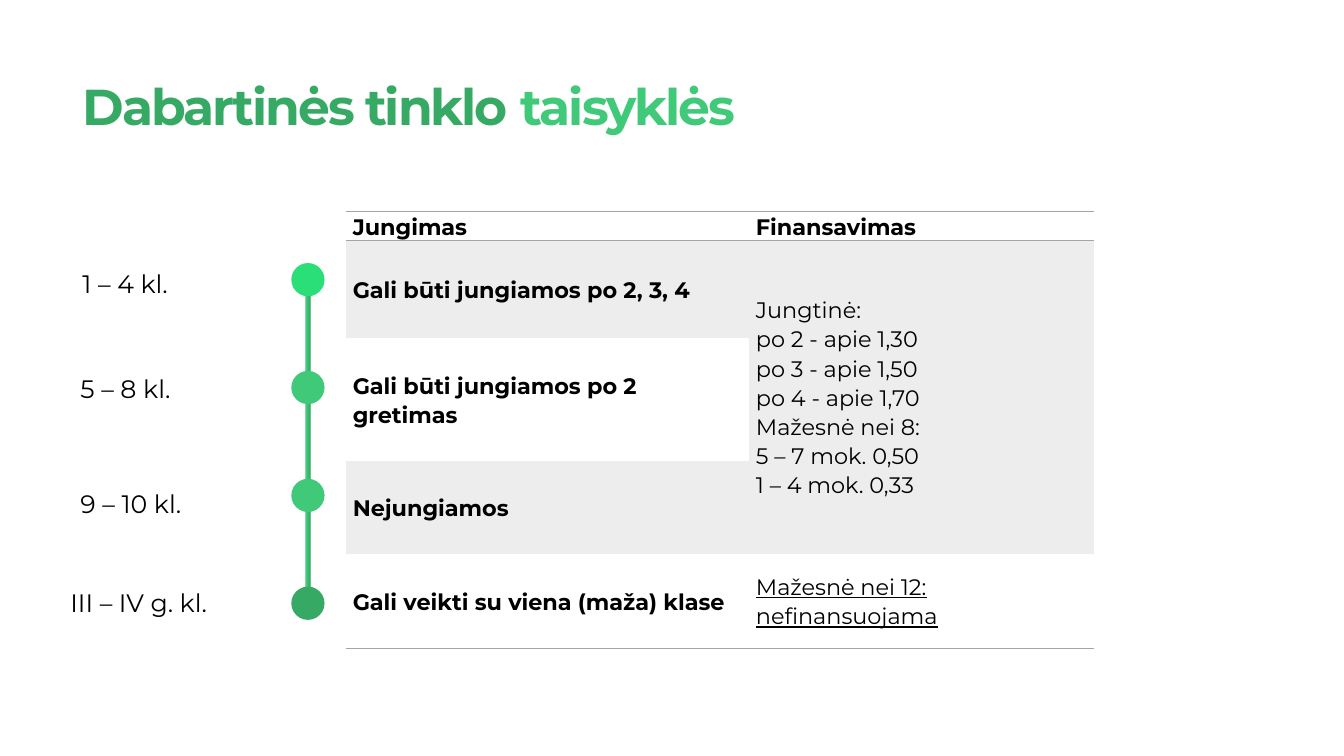
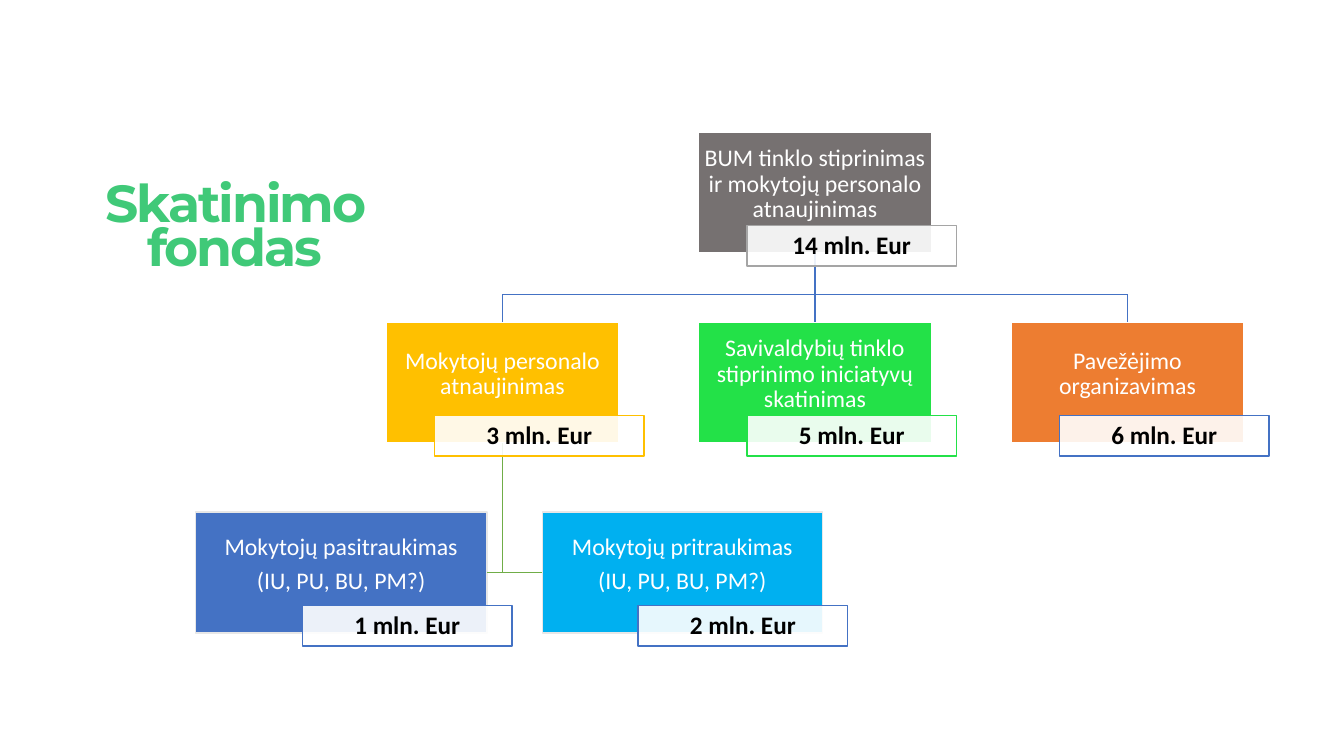
from lxml import etree
from pptx import Presentation
from pptx import util as u
from pptx.dml.color import RGBColor
from pptx.enum import shapes, text
from pptx.oxml import ns

CELL = u.Inches(0.1)  # the grid: square cells, 133.33 columns by 75 rows
COLS, ROWS = 133.33, 75

WHITE = RGBColor(0xFF, 0xFF, 0xFF)
BLACK = RGBColor(0, 0, 0)
DARK_GREEN = RGBColor(0x36, 0xAA, 0x65)
GREEN = RGBColor(0x40, 0xC9, 0x78)
LIGHT_GREEN = RGBColor(0x2B, 0xDF, 0x78)
VIVID_GREEN = RGBColor(0x23, 0xE1, 0x48)
LEAF = RGBColor(0x70, 0xAD, 0x47)
GREY = RGBColor(0xA5, 0xA5, 0xA5)
BAND = RGBColor(0xED, 0xED, 0xED)
DARK_GREY = RGBColor(0x76, 0x71, 0x71)
PALE_GREY = RGBColor(0xE7, 0xE7, 0xE7)
BLUE = RGBColor(0x44, 0x72, 0xC4)
SKY = RGBColor(0x00, 0xB0, 0xF0)
AMBER = RGBColor(0xFF, 0xC0, 0x00)
ORANGE = RGBColor(0xED, 0x7D, 0x31)

HEAD_FONT, CHART_FONT = "Montserrat", "Calibri"
PLAIN_TABLE = "{2D5ABB26-0587-4C30-8999-92F81FD0307C}"
LEFT, CENTER = text.PP_ALIGN.LEFT, text.PP_ALIGN.CENTER
MIDDLE, BOTTOM = text.MSO_ANCHOR.MIDDLE, text.MSO_ANCHOR.BOTTOM
RECT, OVAL = shapes.MSO_SHAPE.RECTANGLE, shapes.MSO_SHAPE.OVAL
TOP_SIDE, LEFT_SIDE, BOTTOM_SIDE, RIGHT_SIDE = range(4)


def grid(*cells):
    return [u.Emu(round(c * CELL)) for c in cells]


def write(tf, *paras, font=HEAD_FONT, size=18, color=BLACK, bold=False, underline=False,
          align=LEFT, leading=None, after=0, spacing=None):
    """Fill tf; a paragraph is a string or a list of (string, colour) runs."""
    for i, para in enumerate(paras):
        p = tf.add_paragraph() if i else tf.paragraphs[0]
        p.alignment = align
        p.space_after = u.Pt(after)
        if leading:
            p.line_spacing = leading
        for words, run_color in [(para, color)] if isinstance(para, str) else para:
            r = p.add_run()
            r.text = words
            f = r.font
            f.name, f.size, f.bold, f.underline = font, u.Pt(size), bold, underline
            f.color.rgb = run_color
            if spacing:
                r._r.get_or_add_rPr().set("spc", str(spacing))


def add_border(cell, side):
    tc_pr = cell._tc.get_or_add_tcPr()
    ln = etree.Element(ns.qn("a:ln" + side), w=str(u.Pt(1)))
    fill = etree.SubElement(ln, ns.qn("a:solidFill"))
    etree.SubElement(fill, ns.qn("a:srgbClr"), val=str(GREY))
    tc_pr.insert(0, ln)


class Deck:
    def __init__(self):
        self.prs = Presentation()
        self.prs.slide_width, self.prs.slide_height = grid(COLS, ROWS)

    def new_slide(self, title, box, **fmt):
        self.s = self.prs.slides.add_slide(self.prs.slide_layouts[5])
        sp = self.s.shapes.title
        sp.left, sp.top, sp.width, sp.height = grid(*box)
        tf = sp.text_frame
        tf.word_wrap, tf.auto_size = True, text.MSO_AUTO_SIZE.NONE
        tf.vertical_anchor = BOTTOM
        write(tf, title, bold=True, spacing=-150, **fmt)

    def shape(self, kind, box, fill=None, line=None, alpha=None):
        sp = self.s.shapes.add_shape(kind, *grid(*box))
        sp.shadow.inherit = False
        if fill is not None:
            sp.fill.solid()
            sp.fill.fore_color.rgb = fill
        if alpha:
            clr = sp._element.spPr.find(".//" + ns.qn("a:srgbClr"))
            etree.SubElement(clr, ns.qn("a:alpha"), val=str(alpha * 1000))
        if line is None:
            sp.line.fill.background()
        else:
            sp.line.color.rgb, sp.line.width = line, u.Pt(1)
        return sp

    def text_shape(self, box, paras, insets, fill, line, alpha=None, **fmt):
        sp = self.shape(RECT, box, fill, line, alpha)
        tf = sp.text_frame
        tf.word_wrap, tf.vertical_anchor = True, MIDDLE
        tf.margin_left, tf.margin_top, tf.margin_right, tf.margin_bottom = grid(*insets)
        write(tf, *paras, font=CHART_FONT, align=CENTER, leading=0.9, after=6, **fmt)
        return sp

    def label(self, box, words):
        tf = self.s.shapes.add_textbox(*grid(*box)).text_frame
        tf.word_wrap = False
        write(tf, words)

    def timeline_bar(self, box):
        sp = self.shape(RECT, box)
        sp.fill.gradient()
        sp.fill.gradient_angle = 0
        for stop, color, at in zip(sp.fill.gradient_stops, (GREEN, DARK_GREEN), (0.19, 1)):
            stop.color.rgb, stop.position = color, at

    def connect(self, start, end, color, begin_at=None, end_at=None):
        """Draw a line; begin_at and end_at are (shape, side) pairs to join."""
        cx = self.s.shapes.add_connector(shapes.MSO_CONNECTOR.STRAIGHT, *grid(*start, *end))
        if begin_at:
            cx.begin_connect(*begin_at)
        if end_at:
            cx.end_connect(*end_at)
        cx.line.color.rgb, cx.line.width = color, u.Pt(1)
        etree.SubElement(cx._element.spPr, ns.qn("a:effectLst"))

    def table(self, left, top, widths, heights):
        box = grid(left, top, sum(widths), sum(heights))
        table = self.s.shapes.add_table(len(heights), len(widths), *box).table
        table.first_row = table.horz_banding = False
        table._tbl.tblPr.find(ns.qn("a:tableStyleId")).text = PLAIN_TABLE
        for column, width in zip(table.columns, grid(*widths)):
            column.width = width
        for row, height in zip(table.rows, grid(*heights)):
            row.height = height
        return table

    def cell(self, cell, paras, fill=None, borders="", **fmt):
        cell.margin_left = cell.margin_right = u.Inches(0.07)
        cell.margin_top = cell.margin_bottom = 0
        cell.vertical_anchor = MIDDLE
        if fill is None:
            cell.fill.background()
        else:
            cell.fill.solid()
            cell.fill.fore_color.rgb = fill
        for side in borders:
            add_border(cell, side)
        write(cell.text_frame, *paras, size=16, leading=1.07, **fmt)


def rules_slide(deck):
    deck.new_slide([("Dabartinės tinklo ", DARK_GREEN), ("taisyklės", GREEN)],
                   (7.2, 6.3, 83.7, 7.7), size=36, leading=0.9)
    deck.timeline_bar((30.3, 27.8, 0.5, 32.5))
    steps = [("1 – 4 kl.", 7.2, 26.1, 10.6, LIGHT_GREEN),
             ("5 – 8 kl.", 7, 36.5, 11.1, GREEN),
             ("9 – 10 kl.", 7, 48, 12.2, GREEN),
             ("III – IV g. kl.", 6, 57.8, 15.8, DARK_GREEN)]
    for i, (words, left, top, width, color) in enumerate(steps):
        deck.shape(OVAL, (28.9, 26.1 + 10.7 * i, 3.3, 3.3), color)
        deck.label((left, top, width, 4), words)

    table = deck.table(34.3, 21, (40, 34.2), (2.8, 9.7, 12.2, 9.2, 9.4))
    for col, heading in enumerate(("Jungimas", "Finansavimas")):
        deck.cell(table.cell(0, col), [heading], borders="BT", bold=True)
    merging = [("Gali būti jungiamos po 2, 3, 4", BAND, ""),
               ("Gali būti jungiamos po 2 gretimas", None, ""),
               ("Nejungiamos", BAND, ""),
               ("Gali veikti su viena (maža) klase", None, "B")]
    for row, (words, fill, borders) in enumerate(merging, 1):
        deck.cell(table.cell(row, 0), [words], fill, borders, bold=True)
    table.cell(1, 1).merge(table.cell(3, 1))
    deck.cell(table.cell(1, 1),
              ["Jungtinė:", "po 2 - apie 1,30", "po 3 - apie 1,50", "po 4 - apie 1,70",
               "Mažesnė nei 8:", "5 – 7 mok. 0,50", "1 – 4 mok. 0,33"], BAND)
    deck.cell(table.cell(4, 1), ["Mažesnė nei 12: nefinansuojama"], borders="B",
              underline=True)


def fund_slide(deck):
    deck.new_slide("Skatinimo fondas", (5.1, 17.3, 36.4, 10.5), size=37.2,
                   color=GREEN, align=CENTER, leading=0.7)
    width, height = 23.1, 12
    columns = [38.3 + 31 * i for i in range(3)]
    levels = [13.1 + 18.85 * i for i in range(3)]
    centers = [c + width / 2 for c in columns]
    audience = "(IU, PU, BU, PM?)"
    # left, level, width, text, fill, outline, amount, badge outline
    nodes = [
        (columns[1], 0, width, ["BUM tinklo stiprinimas ir mokytojų personalo atnaujinimas"],
         DARK_GREY, WHITE, 14, GREY),
        (columns[0], 1, width, ["Mokytojų personalo atnaujinimas"], AMBER, WHITE, 3, AMBER),
        (columns[1], 1, width, ["Savivaldybių tinklo stiprinimo iniciatyvų skatinimas"],
         VIVID_GREEN, WHITE, 5, VIVID_GREEN),
        (columns[2], 1, width, ["Pavežėjimo organizavimas"], ORANGE, WHITE, 6, BLUE),
        (19.4, 2, 28.9, ["Mokytojų pasitraukimas", audience], BLUE, PALE_GREY, 1, BLUE),
        (53.8, 2, 27.8, ["Mokytojų pritraukimas", audience], SKY, PALE_GREY, 2, BLUE),
    ]
    root, staff, network, transport, leaving, joining = [
        deck.text_shape((left, levels[level], w, height), paras, (0.1, 0.1, 0.1, 1.7),
                        fill, line, size=17, color=WHITE)
        for left, level, w, paras, fill, line, _, _ in nodes]

    bus, child_middle = 29.2, levels[2] + height / 2
    deck.connect((centers[1], levels[0] + height), (centers[1], levels[1]), BLUE,
                 (root, BOTTOM_SIDE), (network, TOP_SIDE))
    deck.connect((centers[0], bus), (centers[2], bus), BLUE)
    for x, node in ((centers[0], staff), (centers[2], transport)):
        deck.connect((x, bus), (x, levels[1]), BLUE, end_at=(node, TOP_SIDE))
    deck.connect((centers[0], levels[1] + height), (centers[0], child_middle), LEAF,
                 begin_at=(staff, BOTTOM_SIDE))
    deck.connect((48.3, child_middle), (53.8, child_middle), LEAF,
                 (leaving, RIGHT_SIDE), (joining, LEFT_SIDE))

    badge_width, overhang = 20.8, 2.5
    for left, level, w, _, _, _, amount, line in nodes:
        deck.text_shape((left + w + overhang - badge_width, levels[level] + 9.3, badge_width, 4),
                        [f"{amount} mln. Eur"], (0.5, 0.1, 0.5, 0.1), WHITE, line,
                        alpha=90, size=18, bold=True)


def main():
    deck = Deck()
    rules_slide(deck)
    fund_slide(deck)
    deck.prs.save("out.pptx")


if __name__ == "__main__":
    main()
